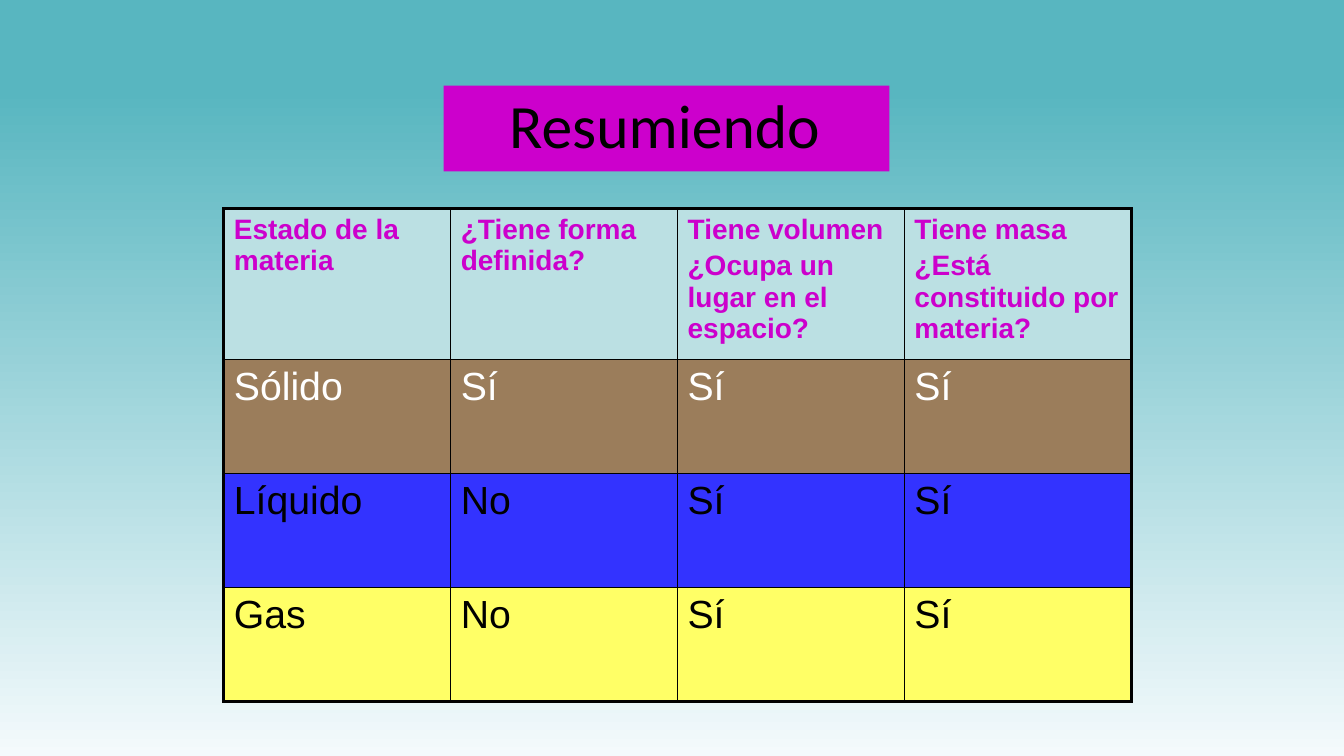
from pptx import Presentation
from pptx.dml.color import RGBColor
from pptx.enum.shapes import MSO_SHAPE
from pptx.enum.text import MSO_ANCHOR, PP_ALIGN
from pptx.oxml import parse_xml
from pptx.oxml.ns import nsdecls
from pptx.util import Inches, Pt

BLACK, WHITE, MAGENTA = "000000", "FFFFFF", "CC00CC"
THIN, THICK = 1, 2.25

HEADERS = [
    "Estado de la materia",
    "¿Tiene forma definida?",
    "Tiene volumen\n¿Ocupa un lugar en el espacio?",
    "Tiene masa\n¿Está constituido por materia?",
]
# Row texts, fill, text colour, size, bold, height
ROWS = [
    (HEADERS, "BBE0E3", MAGENTA, 20, True, 1.5),
    (["Sólido", "Sí", "Sí", "Sí"], "9B7D5B", WHITE, 28, False, 1.13),
    (["Líquido", "No", "Sí", "Sí"], "3333FF", BLACK, 28, False, 1.13),
    (["Gas", "No", "Sí", "Sí"], "FFFF66", BLACK, 28, False, 1.13),
]


def rgb(color):
    return RGBColor.from_string(color)


class SlideBuilder:
    def __init__(self, slide):
        self.s = slide

    def background(self, stops, angle):
        fill = self.s.background.fill
        fill.gradient()
        fill.gradient_angle = angle
        for stop, (position, color) in zip(fill.gradient_stops, stops):
            stop.position = position
            stop.color.rgb = rgb(color)

    def text(self, tf, text, font, size, color, bold=False, line_spacing=None):
        tf.word_wrap = True
        for i, line in enumerate(text.split("\n")):
            p = tf.add_paragraph() if i else tf.paragraphs[0]
            p.alignment = PP_ALIGN.LEFT
            p.line_spacing = line_spacing
            if i:
                p.space_before = Pt(size * 0.2)
            r = p.add_run()
            r.text = line
            for name, value in {"name": font, "size": Pt(size), "bold": bold}.items():
                setattr(r.font, name, value)
            r.font.color.rgb = rgb(color)

    def title(self, text, x, y, w, h, fill, indent):
        sp = self.s.shapes.add_shape(
            MSO_SHAPE.RECTANGLE, Inches(x), Inches(y), Inches(w), Inches(h))
        sp.shadow.inherit = False
        sp.fill.solid()
        sp.fill.fore_color.rgb = rgb(fill)
        sp.line.fill.background()
        tf = sp.text_frame
        tf.margin_left = Inches(indent)
        tf.vertical_anchor = MSO_ANCHOR.MIDDLE
        self.text(tf, text, "Calibri", 44, BLACK, line_spacing=0.9)

    def borders(self, cell, widths):
        """Draw the black cell borders; widths maps L, R, T, B to points."""
        tc_pr = cell._tc.get_or_add_tcPr()
        for side, width in widths.items():
            tc_pr.append(parse_xml(
                f'<a:ln{side} {nsdecls("a")} w="{Pt(width)}"><a:solidFill>'
                f'<a:srgbClr val="{BLACK}"/></a:solidFill></a:ln{side}>'))

    def table(self, rows, x, y, col_width):
        last_row, last_col = len(rows) - 1, len(rows[0][0]) - 1
        height = sum(row[-1] for row in rows)
        table = self.s.shapes.add_table(
            last_row + 1, last_col + 1, Inches(x), Inches(y),
            Inches(col_width * (last_col + 1)), Inches(height)).table
        table.first_row = table.horz_banding = False
        for column in table.columns:
            column.width = Inches(col_width)
        for i, (texts, fill, color, size, bold, row_height) in enumerate(rows):
            table.rows[i].height = Inches(row_height)
            for j, text in enumerate(texts):
                cell = table.cell(i, j)
                outer = {"L": j == 0, "R": j == last_col,
                         "T": i == 0, "B": i == last_row}
                self.borders(cell, {side: THICK if edge else THIN
                                    for side, edge in outer.items()})
                cell.fill.solid()
                cell.fill.fore_color.rgb = rgb(fill)
                self.text(cell.text_frame, text, "Arial", size, color, bold)


def main():
    prs = Presentation()
    prs.slide_width, prs.slide_height = Inches(13.33), Inches(7.5)
    builder = SlideBuilder(prs.slides.add_slide(prs.slide_layouts[6]))
    builder.background([(0.12, "58B6C0"), (1, "F4FAFC")], angle=270)
    builder.title("Resumiendo", 4.4, 0.85, 4.42, 0.85, MAGENTA, indent=0.65)
    builder.table(ROWS, 2.22, 2.07, col_width=2.25)
    prs.save("out.pptx")


if __name__ == "__main__":
    main()
